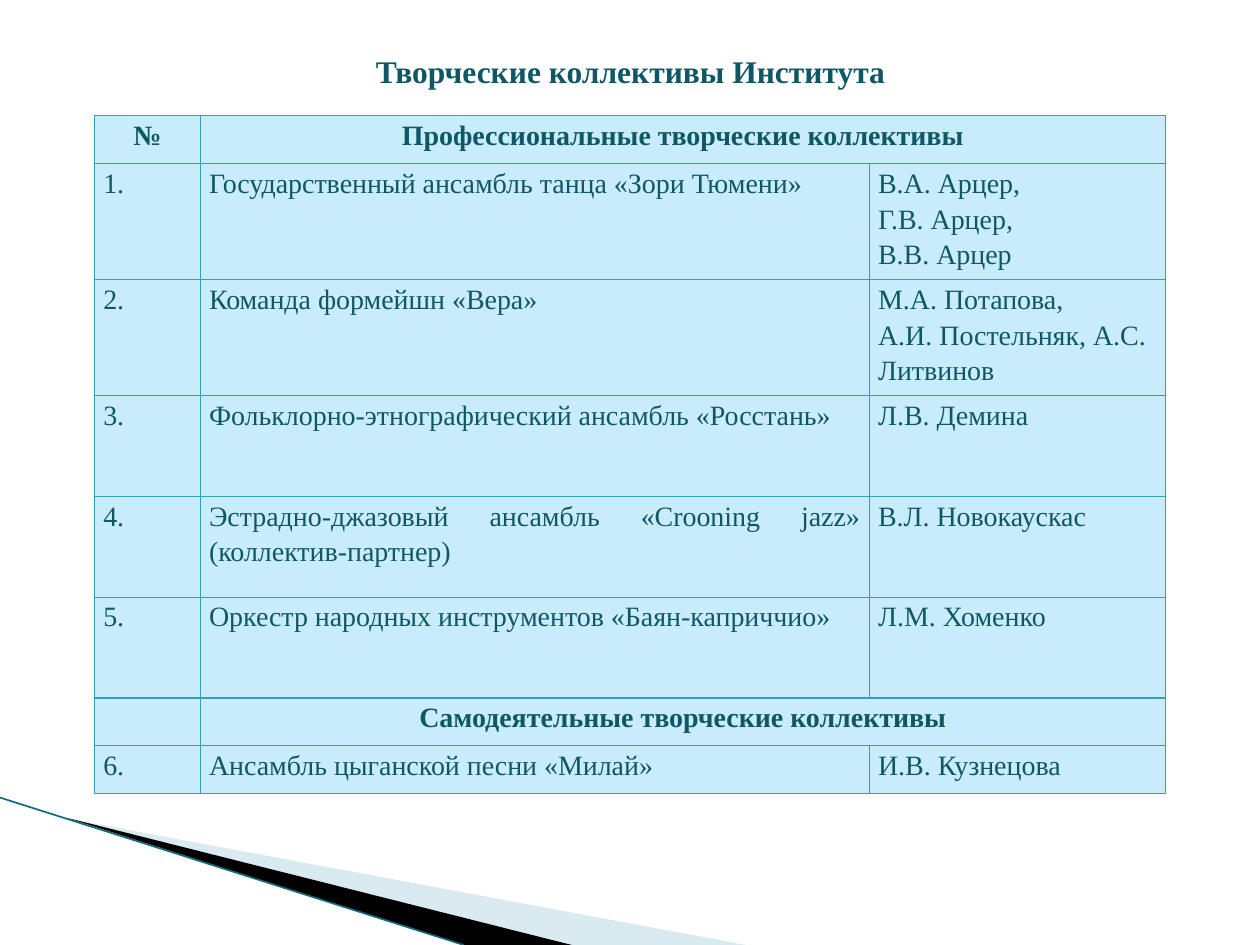
from dataclasses import dataclass

from lxml.etree import SubElement
from pptx import Presentation
from pptx.dml.color import RGBColor
from pptx.enum.shapes import MSO_CONNECTOR as Connector
from pptx.enum.text import MSO_ANCHOR as Anchor, PP_ALIGN as Align
from pptx.oxml.ns import qn
from pptx.util import Inches, Pt

COLORS = {
    "text": "105766",
    "cell": "C9ECFB",
    "border": "2DA2BF",
    "wedge": "A0CBDC",
    "shadow": "000000",
    "edge": "146A7D",
}
FONT = "Times New Roman"
WIDTH, HEIGHT = 10, 7.5
COLUMNS = (0.84, 5.31, 2.35)
SHORT, MEDIUM, TALL = 0.38, 0.8, 0.92
CELL_FORMAT = {"margin_left": Inches(0.07), "margin_right": Inches(0.07),
               "margin_top": 0, "margin_bottom": 0}


@dataclass
class Row:
    number: str
    name: str
    leaders: tuple[str, ...] = ()
    height: float = MEDIUM
    leader_align: Align = Align.JUSTIFY

    @property
    def heading(self) -> bool:
        return not self.leaders


@dataclass
class Wedge:
    points: tuple[tuple[float, float], ...]
    color: str
    opacity: int = 100


ROWS = (
    Row("№", "Профессиональные творческие коллективы", height=SHORT),
    Row("1.", "Государственный ансамбль танца «Зори Тюмени»",
        ("В.А. Арцер,", "Г.В. Арцер,", "В.В. Арцер"), TALL),
    Row("2.", "Команда формейшн «Вера»",
        ("М.А. Потапова,", "А.И. Постельняк, А.С. Литвинов"), TALL, Align.LEFT),
    Row("3.", "Фольклорно-этнографический ансамбль «Росстань»", ("Л.В. Демина",)),
    Row("4.", "Эстрадно-джазовый ансамбль «Crooning jazz» (коллектив-партнер)",
        ("В.Л. Новокаускас",)),
    Row("5.", "Оркестр народных инструментов «Баян-каприччио»", ("Л.М. Хоменко",)),
    Row("", "Самодеятельные творческие коллективы", height=SHORT),
    Row("6.", "Ансамбль цыганской песни «Милай»", ("И.В. Кузнецова",), SHORT),
)
WEDGES = (
    Wedge(((0.55, 6.5), (5.92, HEIGHT), (4.55, HEIGHT)), "wedge", 40),
    Wedge(((0.53, 6.49), (4.54, HEIGHT), (3.68, HEIGHT)), "shadow"),
)


def color(name: str) -> RGBColor:
    return RGBColor.from_string(COLORS[name])


def write(frame, lines: tuple[str, ...], align: Align, size: int, bold: bool,
          spacing: float = 1.0) -> None:
    for index, line in enumerate(lines):
        para = frame.add_paragraph() if index else frame.paragraphs[0]
        for key, value in {"alignment": align, "line_spacing": spacing,
                           "space_before": Pt(0), "space_after": Pt(0)}.items():
            setattr(para, key, value)
        span = para.add_run()
        span.text = line
        for key, value in {"name": FONT, "size": Pt(size), "bold": bold}.items():
            setattr(span.font, key, value)
        span.font.color.rgb = color("text")


def draw_wedge(page, wedge: Wedge) -> None:
    points = [(Inches(x), Inches(y)) for x, y in wedge.points]
    builder = page.shapes.build_freeform(*points[0])
    builder.add_line_segments(points[1:], close=True)
    shape = builder.convert_to_shape()
    shape.shadow.inherit = False
    shape.fill.solid()
    shape.fill.fore_color.rgb = color(wedge.color)
    shape.line.fill.background()
    if wedge.opacity < 100:
        tint = shape.element.spPr.find(".//" + qn("a:srgbClr"))
        SubElement(tint, qn("a:alpha"), val=str(wedge.opacity * 1000))


def draw_edge(page) -> None:
    edge = page.shapes.add_connector(Connector.STRAIGHT, 0, Inches(6.33),
                                     Inches(3.68), Inches(HEIGHT))
    edge.line.color.rgb = color("edge")
    edge.line.width = Pt(0.95)
    SubElement(edge.element.spPr, qn("a:effectLst"))


def format_cell(cell) -> None:
    for key, value in CELL_FORMAT.items():
        setattr(cell, key, value)
    properties = cell._tc.get_or_add_tcPr()
    for side in ("lnL", "lnR", "lnT", "lnB"):
        border = SubElement(properties, qn(f"a:{side}"), w=str(Pt(0.75)))
        fill = SubElement(border, qn("a:solidFill"))
        SubElement(fill, qn("a:srgbClr"), val=COLORS["border"])
    cell.fill.solid()
    cell.fill.fore_color.rgb = color("cell")


def draw_table(page) -> None:
    table = page.shapes.add_table(
        len(ROWS), len(COLUMNS), Inches(0.75), Inches(0.92),
        Inches(sum(COLUMNS)), Inches(sum(row.height for row in ROWS))).table
    for column, width in zip(table.columns, COLUMNS):
        column.width = Inches(width)
    for index, row in enumerate(ROWS):
        table.rows[index].height = Inches(row.height)
        cells = [table.cell(index, column) for column in range(len(COLUMNS))]
        for cell in cells:
            format_cell(cell)
        if row.heading:
            cells[1].merge(cells[2])
        align = Align.CENTER if row.heading else Align.JUSTIFY
        contents = (((row.number,), align), ((row.name,), align),
                    (row.leaders, row.leader_align))
        for cell, (lines, alignment) in zip(cells, contents):
            if any(lines):
                write(cell.text_frame, lines, alignment, 16, row.heading, 1.15)


def draw_title(page) -> None:
    title = page.shapes.title
    for key, value in {"left": 2.86, "top": 0.36, "width": 4.29, "height": 0.4}.items():
        setattr(title, key, Inches(value))
    title.text_frame.vertical_anchor = Anchor.MIDDLE
    write(title.text_frame, ("Творческие коллективы Института",), Align.CENTER, 18, True)


def main() -> None:
    deck = Presentation()
    deck.slide_width, deck.slide_height = Inches(WIDTH), Inches(HEIGHT)
    page = deck.slides.add_slide(deck.slide_layouts[5])
    for wedge in WEDGES:
        draw_wedge(page, wedge)
    draw_edge(page)
    draw_title(page)
    draw_table(page)
    deck.save("out.pptx")


if __name__ == "__main__":
    main()
